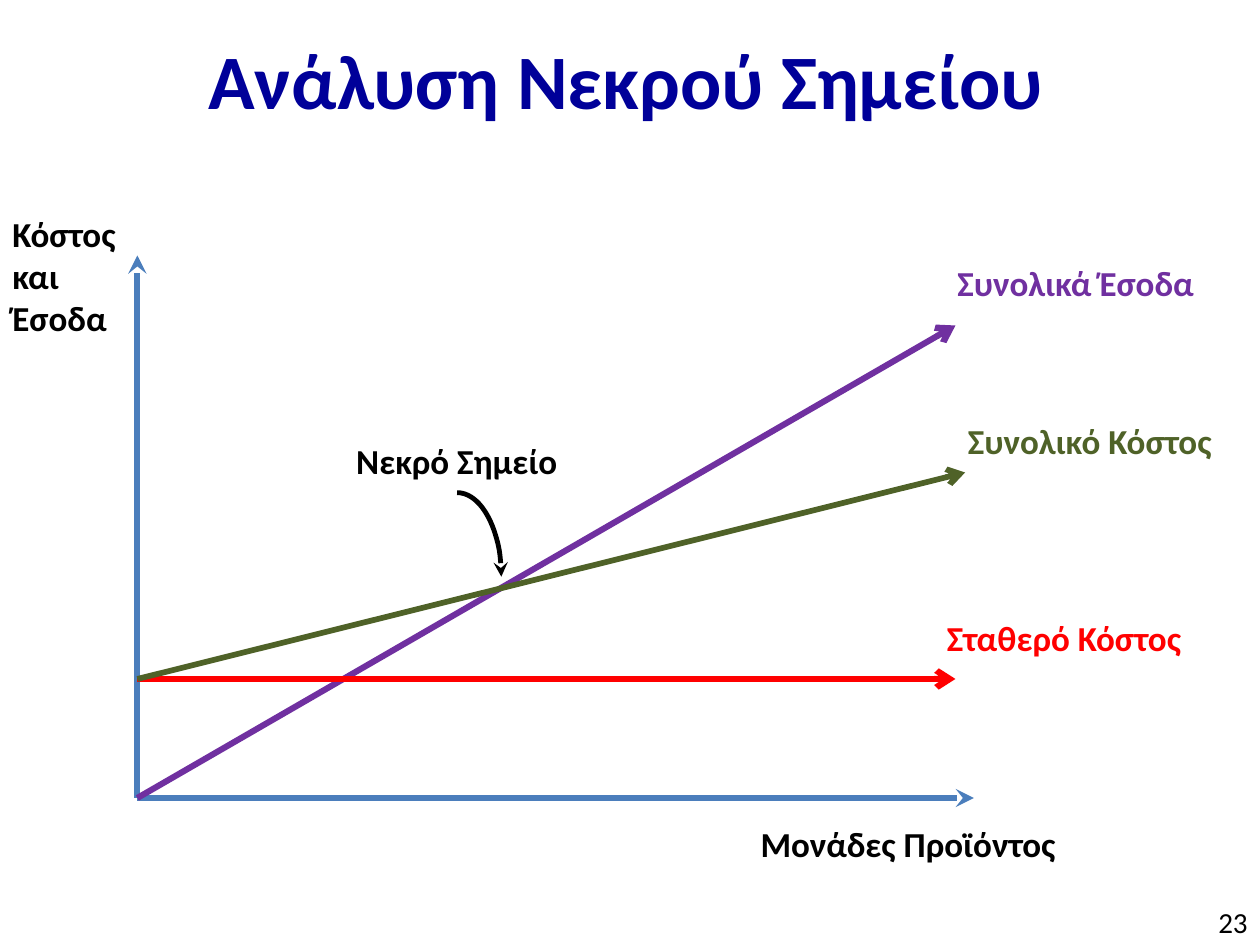
from typing import NamedTuple

from lxml.etree import SubElement
from pptx import Presentation
from pptx.dml.color import RGBColor
from pptx.enum.shapes import MSO_CONNECTOR as Connector, MSO_SHAPE as Shape
from pptx.enum.text import MSO_ANCHOR as Anchor, PP_ALIGN as Align
from pptx.oxml.ns import qn
from pptx.util import Pt

NAVY = RGBColor(0x00, 0x00, 0x99)
BLUE = RGBColor(0x4B, 0x7E, 0xBC)
PURPLE = RGBColor(0x70, 0x30, 0xA0)
RED = RGBColor(0xFF, 0x00, 0x00)
GREEN = RGBColor(0x4F, 0x62, 0x28)
BLACK = RGBColor(0x00, 0x00, 0x00)
FONT = "Calibri"


class Arrow(NamedTuple):
    start: tuple[float, float]
    end: tuple[float, float]
    color: RGBColor
    width: float
    head: str


class Label(NamedTuple):
    lines: tuple[str, ...]
    left: float
    top: float
    width: float
    height: float
    color: RGBColor = BLACK
    size: float = 20
    bold: bool = True
    align: Align = Align.LEFT
    anchor: Anchor = Anchor.TOP


# Chart geometry: both axes leave the origin, both costs leave the fixed cost
AXIS_X, AXIS_Y = 78.5, 456
FIXED_Y = 388
ORIGIN = (AXIS_X, AXIS_Y)
FIXED_COST = (AXIS_X, FIXED_Y)

ARROWS = [
    Arrow(ORIGIN, (AXIS_X, 146), BLUE, 3.5, "stealth"),
    Arrow(ORIGIN, (556.5, AXIS_Y), BLUE, 3.5, "stealth"),
    Arrow(ORIGIN, (546, 186), PURPLE, 3.5, "arrow"),
    Arrow(FIXED_COST, (546, FIXED_Y), RED, 3.5, "arrow"),
    Arrow(FIXED_COST, (551.5, 270), GREEN, 3.25, "arrow"),
]

LABELS = [
    Label(("Συνολικό Κόστος",), 546, 236, 158, 31.5, GREEN),
    Label(("Συνολικά Έσοδα",), 540, 146, 158, 31.5, PURPLE),
    Label(("Σταθερό Κόστος",), 534, 348.5, 163.5, 31.5, RED),
    Label(("Νεκρό Σημείο",), 196.5, 247.5, 135.5, 31.5),
    Label(("Μονάδες Προϊόντος",), 427.5, 466.5, 219.5, 31.5),
    Label(("Κόστος", "και", "Έσοδα"), 0, 118, 78.5, 80),
    Label(("23",), 566.5, 514, 153.5, 26, size=16.6, bold=False,
          align=Align.RIGHT, anchor=Anchor.MIDDLE),
]


def style_font(font, size: float, color: RGBColor, bold: bool) -> None:
    font.name = FONT
    font.size = Pt(size)
    font.bold = bold
    font.color.rgb = color


def style_line(line, color: RGBColor, width: float, head: str) -> None:
    line.color.rgb = color
    line.width = Pt(width)
    SubElement(line._get_or_add_ln(), qn("a:tailEnd"), type=head)


def add_arrow(page, arrow: Arrow) -> None:
    points = [Pt(value) for value in arrow.start + arrow.end]
    connector = page.shapes.add_connector(Connector.STRAIGHT, *points)
    style_line(connector.line, arrow.color, arrow.width, arrow.head)
    SubElement(connector._element.spPr, qn("a:effectLst"))


def add_label(page, label: Label) -> None:
    box = page.shapes.add_textbox(Pt(label.left), Pt(label.top),
                                  Pt(label.width), Pt(label.height))
    frame = box.text_frame
    frame.word_wrap = True
    frame.vertical_anchor = label.anchor
    frame.text = "\n".join(label.lines)
    for para in frame.paragraphs:
        para.alignment = label.align
        style_font(para.font, label.size, label.color, label.bold)


def main() -> None:
    deck = Presentation()
    deck.slide_width, deck.slide_height = Pt(720), Pt(540)
    page = deck.slides.add_slide(deck.slide_layouts[5])

    # Title
    title = page.shapes.title
    title.left, title.top = Pt(34), Pt(0)
    title.width, title.height = Pt(648), Pt(90)
    title.text_frame.text = "Ανάλυση Νεκρού Σημείου"
    title.text_frame.vertical_anchor = Anchor.MIDDLE
    heading = title.text_frame.paragraphs[0]
    heading.alignment = Align.CENTER
    style_font(heading.font, 44, NAVY, True)

    # Axes and cost and revenue lines
    for arrow in ARROWS:
        add_arrow(page, arrow)

    # Curved pointer to the break-even point
    pointer = page.shapes.add_shape(Shape.ARC, Pt(236), Pt(281.5), Pt(50.5), Pt(96))
    pointer.shadow.inherit = False
    pointer.fill.background()
    style_line(pointer.line, BLACK, 2.75, "stealth")

    # Labels and page number
    for label in LABELS:
        add_label(page, label)

    deck.save("out.pptx")


if __name__ == "__main__":
    main()
